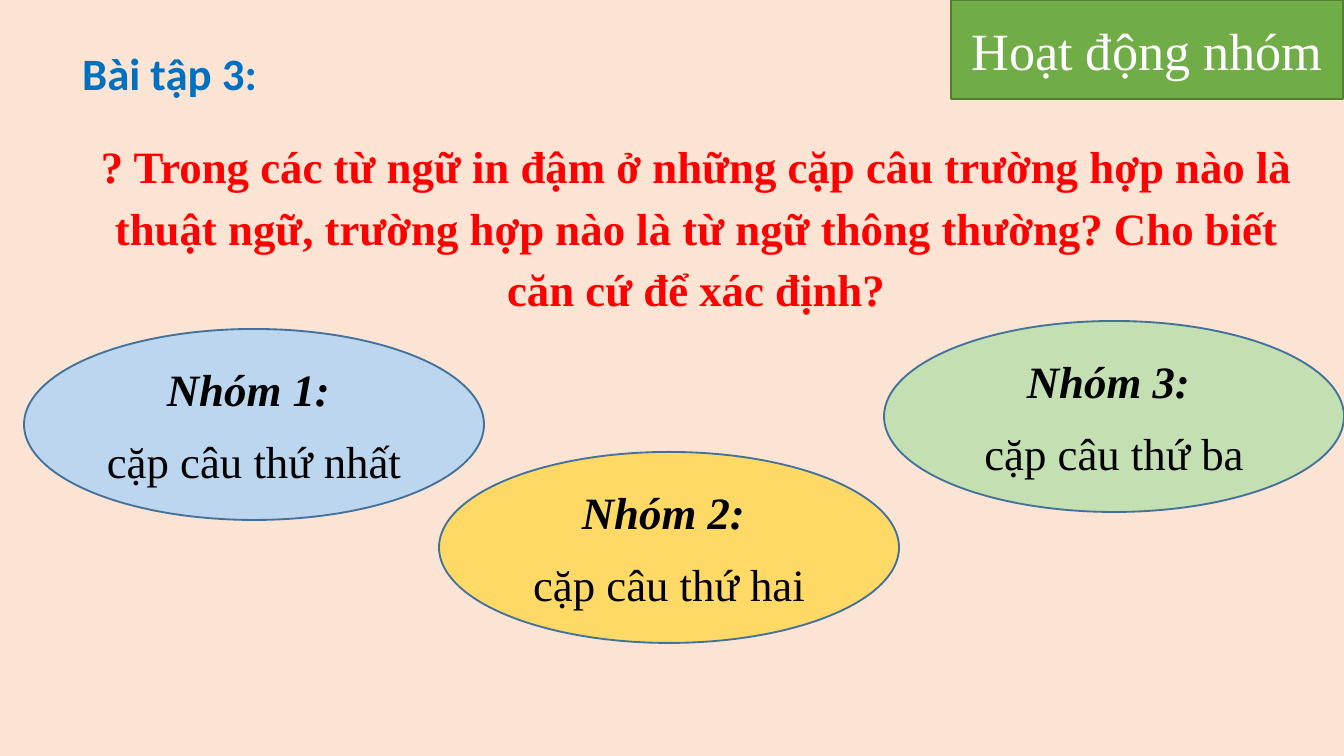
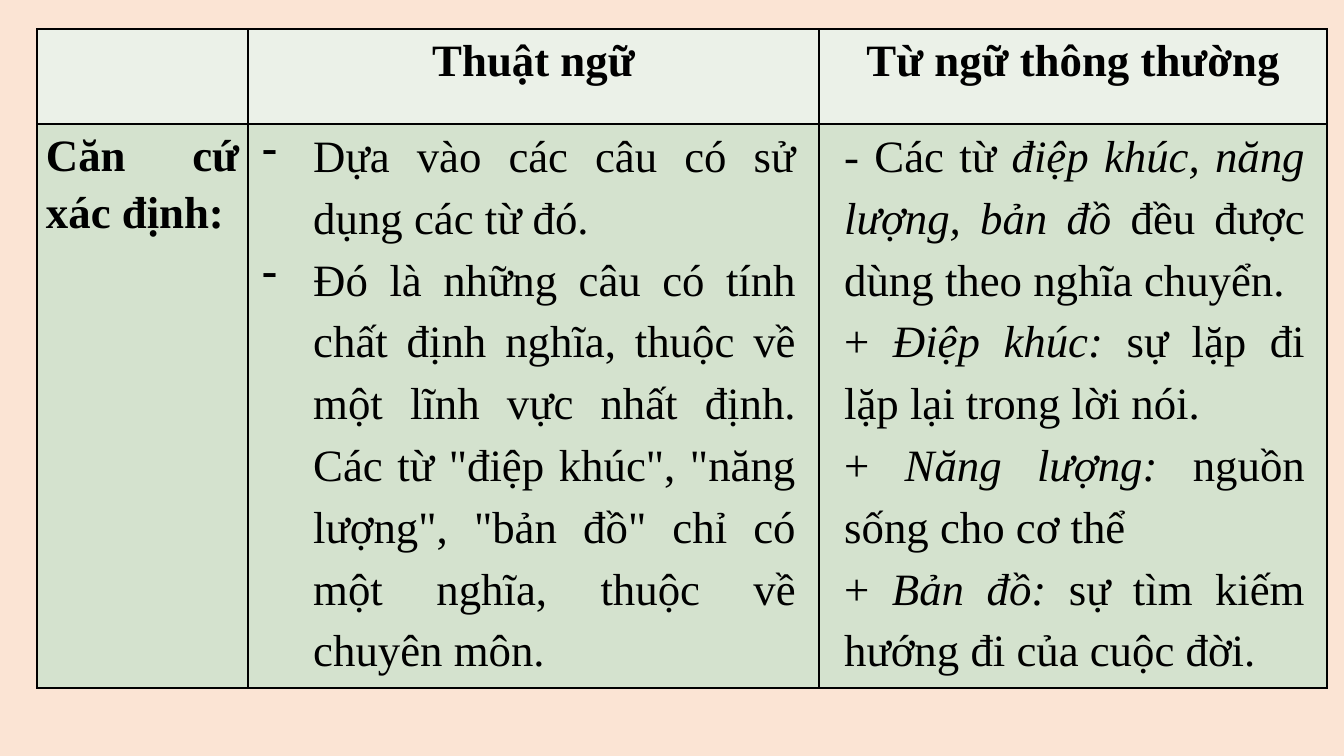
from lxml import etree
from pptx import Presentation
from pptx import util as u
from pptx.dml import color
from pptx.enum import shapes, text
from pptx.oxml import ns

PX = 914400 / 134.4
SERIF, SANS = "Times New Roman", "Calibri"
SPACING = 1.15
CENTER, JUSTIFY = text.PP_ALIGN.CENTER, text.PP_ALIGN.JUSTIFY

COLORS = {
    "background": "FBE4D4",
    "heading": "0070C0",
    "question": "FF0000",
    "badge": "70AD47",
    "badge_line": "517E33",
    "group_line": "42719B",
    "group_1": "BBD6EE",
    "group_2": "FFD966",
    "group_3": "C4E0B2",
    "header_row": "EBF1E8",
    "body_row": "D4E2CE",
    "black": "000000",
    "white": "FFFFFF",
}


def px(value):
    return u.Emu(round(value * PX))


def rgb(name):
    return color.RGBColor.from_string(COLORS[name])


def child(parent, tag, **attributes):
    return etree.SubElement(parent, ns.qn(tag), attributes)


# Text
def add_run(paragraph, words, ink="black", size=24, font=SERIF, bold=False, italic=False):
    run = paragraph.add_run()
    run.text = words
    run.font.name, run.font.size = font, u.Pt(size)
    run.font.bold, run.font.italic = bold, italic
    run.font.color.rgb = rgb(ink)


def add_paragraphs(frame, paragraphs, align=None, spacing=None, before=None):
    """Each paragraph is a list of (words, run style) pairs."""
    for index, runs in enumerate(paragraphs):
        paragraph = frame.add_paragraph() if index else frame.paragraphs[0]
        paragraph.alignment = align
        if spacing:
            paragraph.line_spacing = spacing
        if before and index:
            paragraph.space_before = u.Pt(before)
        for words, style in runs:
            add_run(paragraph, words, **style)


def add_dash(paragraph, indent):
    properties = paragraph._p.get_or_add_pPr()
    properties.set("marL", str(px(indent)))
    properties.set("indent", str(-px(indent)))
    child(child(properties, "a:buClr"), "a:srgbClr", val=COLORS["black"])
    child(properties, "a:buChar", char="-")


def add_text(slide, box, paragraphs, **layout):
    frame = slide.shapes.add_textbox(*map(px, box)).text_frame
    frame.word_wrap = True
    frame.auto_size = text.MSO_AUTO_SIZE.SHAPE_TO_FIT_TEXT
    add_paragraphs(frame, paragraphs, **layout)
    return frame


# Shapes
def add_panel(slide, preset, box, fill, line, paragraphs, **layout):
    panel = slide.shapes.add_shape(preset, *map(px, box))
    panel.shadow.inherit = False
    panel.fill.solid()
    panel.fill.fore_color.rgb = rgb(fill)
    panel.line.color.rgb = rgb(line)
    panel.line.width = u.Pt(1)
    panel.text_frame.vertical_anchor = text.MSO_ANCHOR.MIDDLE
    add_paragraphs(panel.text_frame, paragraphs, align=CENTER, **layout)


# Table
def border_cell(cell):
    properties = cell._tc.get_or_add_tcPr()
    for position, side in enumerate(("a:lnL", "a:lnR", "a:lnT", "a:lnB")):
        edge = etree.Element(ns.qn(side), w=str(u.Pt(1)))
        child(child(edge, "a:solidFill"), "a:srgbClr", val=COLORS["black"])
        properties.insert(position, edge)


def add_grid(slide, left, top, widths, heights, row_fills):
    grid = slide.shapes.add_table(
        len(heights), len(widths), *map(px, (left, top, sum(widths), sum(heights)))).table
    for column, width in zip(grid.columns, widths):
        column.width = px(width)
    for row, height, fill in zip(grid.rows, heights, row_fills):
        row.height = px(height)
        for cell in row.cells:
            cell.fill.solid()
            cell.fill.fore_color.rgb = rgb(fill)
            border_cell(cell)
    return grid


def fill_cell(cell, words, align, margin):
    cell.margin_left = cell.margin_right = px(margin)
    cell.margin_top = cell.margin_bottom = 0
    add_paragraphs(cell.text_frame, [[(words, {"bold": True})]], align=align, spacing=SPACING)


# Slides
def new_slide(deck):
    slide = deck.slides.add_slide(deck.slide_layouts[6])
    slide.background.fill.solid()
    slide.background.fill.fore_color.rgb = rgb("background")
    return slide


def build_exercise(deck):
    slide = new_slide(deck)

    # Heading, question and badge
    add_text(slide, (69, 39, 276, 67),
             [[("Bài tập 3:", {"ink": "heading", "font": SANS, "bold": True})]])
    question = ("? Trong các từ ngữ in đậm ở những cặp câu trường hợp nào là thuật ngữ, "
                "trường hợp nào là từ ngữ thông thường? Cho biết căn cứ để xác định?")
    add_text(slide, (69, 124, 1254, 198), [[(question, {"ink": "question", "bold": True})]],
             align=CENTER, spacing=SPACING)
    add_panel(slide, shapes.MSO_SHAPE.RECTANGLE, (951, 0, 392, 99), "badge", "badge_line",
              [[("Hoạt động nhóm", {"ink": "white", "size": 28})]])

    # Groups
    groups = [(24, 329, "nhất"), (439, 452, "hai"), (884, 321, "ba")]
    for number, (left, top, ordinal) in enumerate(groups, 1):
        add_panel(slide, shapes.MSO_SHAPE.OVAL, (left, top, 460, 191),
                  f"group_{number}", "group_line",
                  [[(f"Nhóm {number}: ", {"bold": True, "italic": True})],
                   [(f"cặp câu thứ {ordinal}", {})]], before=10)


def build_answer(deck):
    slide = new_slide(deck)

    # Comparison table
    grid = add_grid(slide, 37, 29, (211, 571, 508), (95, 564), ("header_row", "body_row"))
    fill_cell(grid.cell(0, 1), "Thuật ngữ", CENTER, 5)
    fill_cell(grid.cell(0, 2), "Từ ngữ thông thường", CENTER, 5)
    fill_cell(grid.cell(1, 0), "Căn cứ xác định:", JUSTIFY, 9)

    # Terms
    terms = [
        "Dựa vào các câu có sử dụng các từ đó. ",
        "Đó là những câu có tính chất định nghĩa, thuộc về một lĩnh vực nhất định. "
        'Các từ "điệp khúc", "năng lượng", "bản đồ" chỉ có một nghĩa, thuộc về chuyên môn.',
    ]
    frame = add_text(slide, (249, 113, 560, 571), [[(term, {})] for term in terms],
                     align=JUSTIFY, spacing=SPACING)
    for paragraph in frame.paragraphs:
        add_dash(paragraph, 51)

    # Ordinary words
    meanings = [
        ("- Các từ ", "điệp khúc, năng lượng, bản đồ", " đều được dùng theo nghĩa chuyển."),
        ("+ ", "Điệp khúc: ", "sự lặp đi lặp lại trong lời nói."),
        ("+ ", "Năng lượng: ", "nguồn sống cho cơ thể"),
        ("+ ", "Bản đồ: ", "sự tìm kiếm hướng đi của cuộc đời."),
    ]
    add_text(slide, (831, 113, 487, 575),
             [[(mark, {}), (word, {"italic": True}), (meaning, {})]
              for mark, word, meaning in meanings],
             align=JUSTIFY, spacing=SPACING)


def main():
    deck = Presentation()
    deck.slide_width, deck.slide_height = px(1344), px(756)
    build_exercise(deck)
    build_answer(deck)
    deck.save("out.pptx")


if __name__ == "__main__":
    main()
